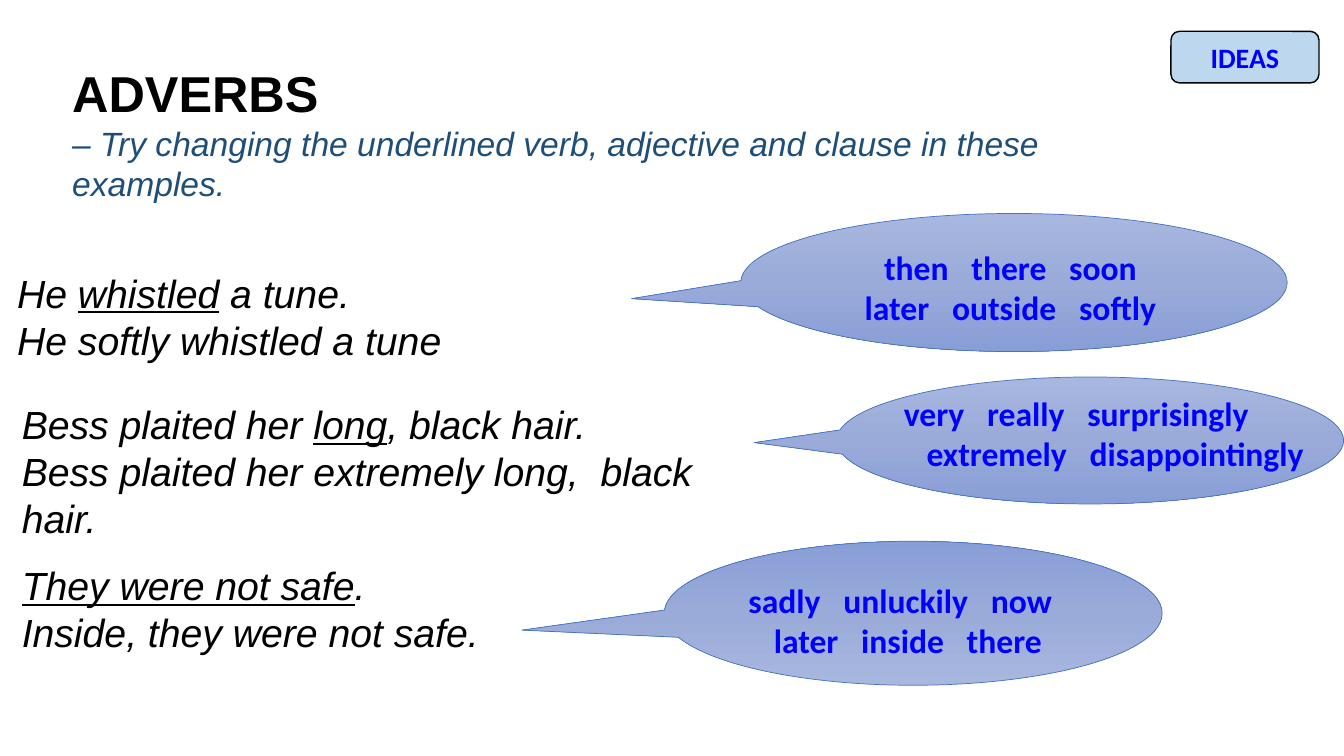
import copy

import pptx
import pptx.dml.color
import pptx.enum.shapes
import pptx.enum.text
import pptx.oxml.ns
import pptx.util

RGBColor = pptx.dml.color.RGBColor
Cm = pptx.util.Cm
Pt = pptx.util.Pt
MSO_SHAPE = pptx.enum.shapes.MSO_SHAPE
PP_ALIGN = pptx.enum.text.PP_ALIGN

BLACK = RGBColor(0x00, 0x00, 0x00)
NAVY = RGBColor(0x1F, 0x4E, 0x79)
WORD_BLUE = RGBColor(0x00, 0x00, 0xFF)
OUTLINE_BLUE = RGBColor(0x44, 0x72, 0xC4)
BADGE_BLUE = RGBColor(0xBD, 0xD7, 0xEE)
BUBBLE_STOPS = [
    (0, RGBColor(0xA8, 0xB7, 0xDF)),
    (0.5, RGBColor(0x9A, 0xAB, 0xD9)),
    (1, RGBColor(0x88, 0x9E, 0xD7)),
]

# box in cm, then paragraphs of (text, underlined) runs
SENTENCES = [
    ((0.18, 6.65, 16.13, 2.64),
     [[("He ", False), ("whistled", True), (" a tune.", False)],
      [("He softly whistled a tune", False)]]),
    ((0.3, 9.96, 17.81, 3.84),
     [[("Bess plaited her ", False), ("long", True), (", black hair.", False)],
      [("Bess plaited her extremely long,  black hair.", False)]]),
    ((0.3, 14.02, 15.04, 2.64),
     [[("They were not safe", True), (".", False)],
      [("Inside, they were not safe.", False)]]),
]

# bubble box, pointer, flipped, text box, alignment, indent of last line, lines
BUBBLES = [
    ((18.67, 5.38, 13.77, 3.48), (-0.7, 0.117), False,
     (19.56, 6.1, 11.81, 2.31), PP_ALIGN.CENTER, 0,
     ["then   there   soon", "later   outside   softly"]),
    ((21.08, 9.5, 12.78, 3.2), (-0.662, 0.017), False,
     (22.53, 9.78, 10.64, 2.31), PP_ALIGN.LEFT, 0.57,
     ["very   really   surprisingly", "extremely   disappointingly"]),
    ((16.74, 13.64, 12.55, 3.63), (-0.786, -0.117), True,
     (18.08, 14.48, 9.6, 2.31), PP_ALIGN.CENTER, 0,
     ["sadly   unluckily   now   later   inside   there"]),
]


class AdverbSlide:
    def __init__(self, slide):
        self.shapes = slide.shapes

    def add_run(self, paragraph, text, size, color, font="Arial",
                bold=False, italic=False, underline=False):
        run = paragraph.add_run()
        run.text = text
        run.font.name = font
        run.font.size = Pt(size)
        run.font.color.rgb = color
        run.font.bold = bold
        run.font.italic = italic
        run.font.underline = underline

    def add_paragraphs(self, frame, count):
        """Return the first paragraph of the frame and as many more as needed."""
        return [frame.paragraphs[0]] + [frame.add_paragraph() for _ in range(count - 1)]

    def text_frame(self, shapes, box):
        frame = shapes.add_textbox(*map(Cm, box)).text_frame
        frame.word_wrap = True
        return frame

    def outlined_shape(self, shapes, kind, box, color, width):
        shape = shapes.add_shape(kind, *map(Cm, box))
        shape.shadow.inherit = False
        shape.line.color.rgb = color
        shape.line.width = Pt(width)
        return shape

    def title(self, box, heading, task):
        frame = self.text_frame(self.shapes, box)
        first, second = self.add_paragraphs(frame, 2)
        self.add_run(first, heading, 36, BLACK, bold=True)
        self.add_run(second, task, 24, NAVY, italic=True)

    def sentences(self, box, lines):
        frame = self.text_frame(self.shapes, box)
        for paragraph, runs in zip(self.add_paragraphs(frame, len(lines)), lines):
            for text, underline in runs:
                self.add_run(paragraph, text, 28, BLACK, italic=True, underline=underline)

    def fill_bubble(self, shape):
        shape.fill.gradient()
        shape.fill.gradient_angle = 270
        first_stop = shape._element.spPr.find(".//" + pptx.oxml.ns.qn("a:gs"))
        first_stop.addnext(copy.deepcopy(first_stop))
        for stop, (position, color) in zip(shape.fill.gradient_stops, BUBBLE_STOPS):
            stop.position = position
            stop.color.rgb = color

    def bubble(self, box, pointer, flipped, text_box, alignment, indent, lines):
        group = self.shapes.add_group_shape()
        shape = self.outlined_shape(
            group.shapes, MSO_SHAPE.OVAL_CALLOUT, box, OUTLINE_BLUE, 0.5)
        shape.adjustments[0], shape.adjustments[1] = pointer
        self.fill_bubble(shape)
        if flipped:
            shape._element.spPr.xfrm.set("flipV", "1")
        frame = self.text_frame(group.shapes, text_box)
        paragraphs = self.add_paragraphs(frame, len(lines))
        for paragraph, text in zip(paragraphs, lines):
            paragraph.alignment = alignment
            self.add_run(paragraph, text, 24, WORD_BLUE, "Calibri", bold=True)
        if indent:
            paragraphs[-1]._p.get_or_add_pPr().set("marL", str(Cm(indent)))

    def badge(self, box, text):
        shape = self.outlined_shape(
            self.shapes, MSO_SHAPE.ROUNDED_RECTANGLE, box, BLACK, 1)
        shape.fill.solid()
        shape.fill.fore_color.rgb = BADGE_BLUE
        shape.text_frame.vertical_anchor = pptx.enum.text.MSO_ANCHOR.MIDDLE
        paragraph = shape.text_frame.paragraphs[0]
        paragraph.alignment = PP_ALIGN.CENTER
        self.add_run(paragraph, text, 20, WORD_BLUE, "Calibri", bold=True)


def main():
    presentation = pptx.Presentation()
    presentation.slide_width = Cm(33.87)
    presentation.slide_height = Cm(19.05)
    page = AdverbSlide(presentation.slides.add_slide(presentation.slide_layouts[6]))
    page.title((1.57, 1.45, 28.47, 3.84), "ADVERBS",
               "– Try changing the underlined verb, adjective and clause in these examples.")
    for sentence in SENTENCES:
        page.sentences(*sentence)
    for bubble in BUBBLES:
        page.bubble(*bubble)
    page.badge((29.51, 0.79, 3.73, 1.3), "IDEAS")
    presentation.save("out.pptx")


if __name__ == "__main__":
    main()
